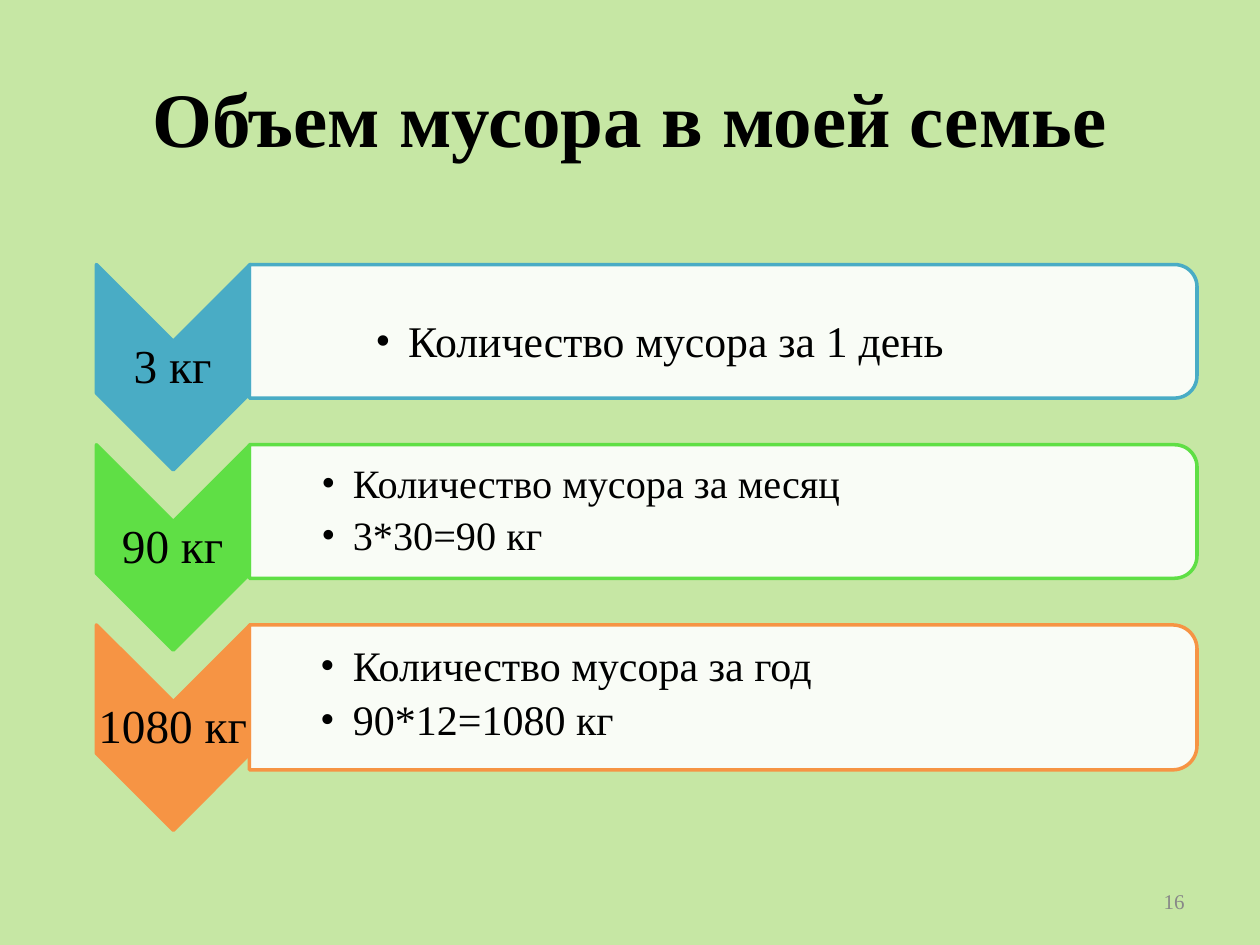
from lxml.etree import SubElement
from pptx import Presentation
from pptx.dml.color import RGBColor
from pptx.enum.shapes import MSO_SHAPE
from pptx.enum.text import MSO_ANCHOR, PP_ALIGN
from pptx.oxml.ns import qn
from pptx.util import Inches, Pt

BACKGROUND = RGBColor(0xC6, 0xE7, 0xA4)
BLUE = RGBColor(0x49, 0xAC, 0xC5)
GREEN = RGBColor(0x5F, 0xDF, 0x45)
ORANGE = RGBColor(0xF6, 0x94, 0x44)
WHITE = RGBColor(0xFF, 0xFF, 0xFF)
BLACK = RGBColor(0, 0, 0)
GREY = RGBColor(0x88, 0x88, 0x88)

COLS, ROWS = 100, 75
FIRST_ROW, ROW_STEP = 21, 14.3
TIGHT = (0.02, 0.02, 0.02, 0.02)
BULLETED = (0.25, 0.02, 0.02, 0.02)

# amount, colour, panel height, text box, font size, bullet indent, lines
PERIODS = [
    ("3 кг", BLUE, 10.6, (26.8, 19.1, 68.2, 16.3), 25, 0.26,
     ["Количество мусора за 1 день"]),
    ("90 кг", GREEN, 10.6, (22.4, 35.3, 68.2, 10.6), 23, 0.25,
     ["Количество мусора за месяц", "3*30=90 кг"]),
    ("1080 кг", ORANGE, 11.5, (22.4, 47, 68.2, 16.3), 24, 0.26,
     ["Количество мусора за год", "90*12=1080 кг"]),
]


class SlideBuilder:
    """Draws on one slide; boxes are (column, row, columns, rows)."""

    font = "Times New Roman"
    line_width = Pt(2)

    def __init__(self, prs):
        self.s = prs.slides.add_slide(prs.slide_layouts[6])
        self.cell_w = prs.slide_width / COLS
        self.cell_h = prs.slide_height / ROWS
        fill = self.s.background.fill
        fill.solid()
        fill.fore_color.rgb = BACKGROUND

    def place(self, box):
        x, y, w, h = box
        return (round(x * self.cell_w), round(y * self.cell_h),
                round(w * self.cell_w), round(h * self.cell_h))

    def turned_shape(self, kind, box, adjustments, fill, line, opacity=None):
        """Add a shape turned by 90 degrees that covers the box as seen."""
        x, y, w, h = self.place(box)
        sp = self.s.shapes.add_shape(
            kind, x + (w - h) // 2, y + (h - w) // 2, h, w)
        sp.rotation = 90
        sp.shadow.inherit = False
        for i, value in enumerate(adjustments):
            sp.adjustments[i] = value
        sp.fill.solid()
        sp.fill.fore_color.rgb = fill
        sp.line.color.rgb = line
        sp.line.width = self.line_width
        if opacity is not None:
            clr = sp.fill._xPr.find(qn("a:solidFill"))[0]
            SubElement(clr, qn("a:alpha"), val=str(opacity * 1000))

    def text(self, box, lines, size, align=PP_ALIGN.LEFT, color=BLACK,
             bold=False, insets=(0.1, 0.05, 0.1, 0.05), spacing=None,
             bullet_indent=None):
        tf = self.s.shapes.add_textbox(*self.place(box)).text_frame
        sides = ("margin_left", "margin_top", "margin_right", "margin_bottom")
        frame_format = dict(zip(sides, map(Inches, insets)), word_wrap=True,
                            vertical_anchor=MSO_ANCHOR.MIDDLE)
        for name, value in frame_format.items():
            setattr(tf, name, value)
        for i, line in enumerate(lines):
            p = tf.paragraphs[0] if i == 0 else tf.add_paragraph()
            p.alignment = align
            p.line_spacing = spacing
            if i:
                p.space_before = Pt(4.8)
            if bullet_indent:
                self.bullet(p, bullet_indent)
            r = p.add_run()
            r.text = line
            for name, value in {"name": self.font, "size": Pt(size),
                                "bold": bold}.items():
                setattr(r.font, name, value)
            r.font.color.rgb = color

    def bullet(self, p, indent):
        pPr = p._p.get_or_add_pPr()
        pPr.set("lvl", "1")
        pPr.set("marL", str(Inches(0.31)))
        pPr.set("indent", str(-Inches(indent)))
        SubElement(pPr, qn("a:buFont"), typeface=self.font)
        SubElement(pPr, qn("a:buChar"), char="•")

    def period(self, top, amount, color, height, text_box, size, indent, lines):
        """Add one row: chevron with the amount and a panel with bullets."""
        self.turned_shape(MSO_SHAPE.CHEVRON, (7.65, top, 12.2, 16.3),
                          [0.5], color, color)
        self.text((5, top + 2.5, 17.4, 11.4), [amount], 27, PP_ALIGN.CENTER,
                  insets=TIGHT, spacing=0.9)
        self.turned_shape(MSO_SHAPE.ROUND_2_SAME_RECTANGLE,
                          (19.8, top, 75.2, height), [0.167, 0],
                          WHITE, color, opacity=90)
        self.text(text_box, lines, size, insets=BULLETED, spacing=0.9,
                  bullet_indent=indent)


def main():
    prs = Presentation()
    prs.slide_width, prs.slide_height = Inches(10), Inches(7.5)
    slide = SlideBuilder(prs)
    slide.text((5, 3, 90, 12.5), ["Объем мусора в моей семье"], 44,
               PP_ALIGN.CENTER, bold=True)
    for i, period in enumerate(PERIODS):
        slide.period(FIRST_ROW + i * ROW_STEP, *period)
    slide.text((71.7, 69.5, 23.3, 4), ["16"], 12, PP_ALIGN.RIGHT, GREY)
    prs.save("out.pptx")


if __name__ == "__main__":
    main()
